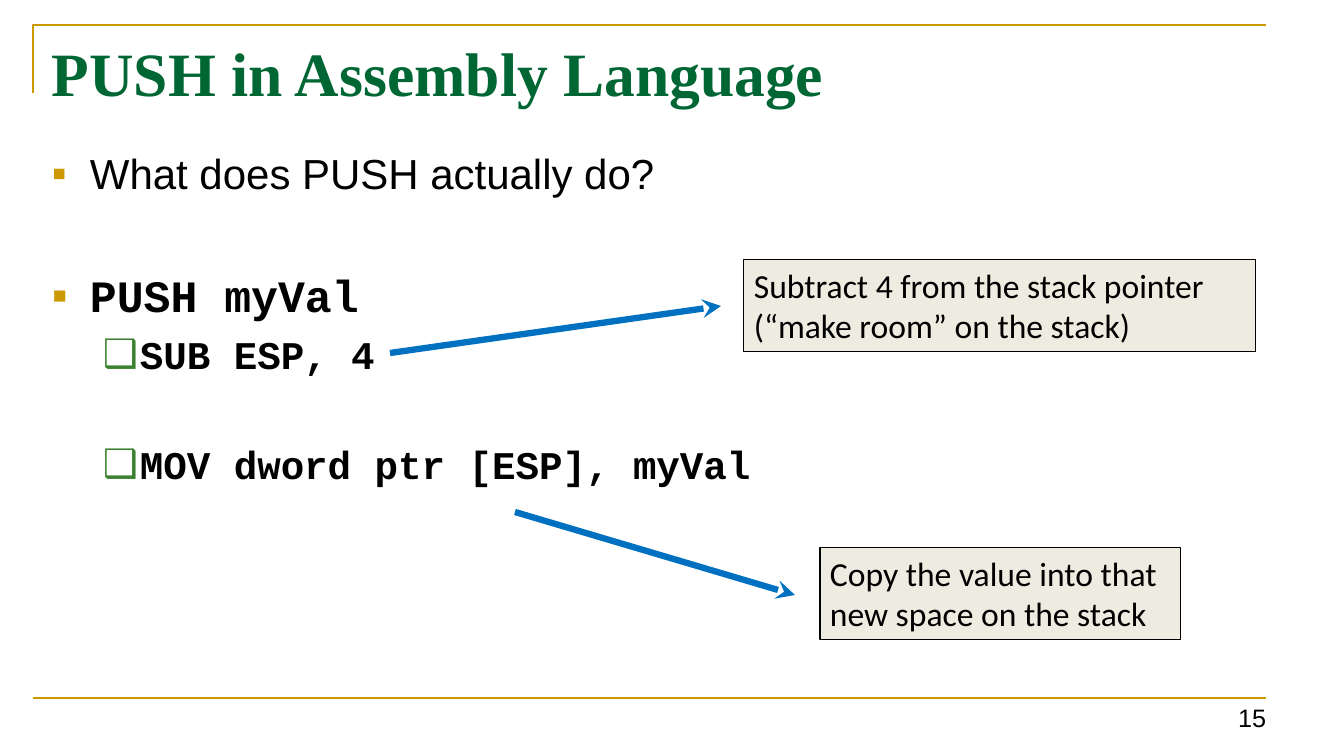
from lxml.etree import SubElement
from pptx import Presentation
from pptx.dml.color import RGBColor
from pptx.enum.shapes import MSO_CONNECTOR as Connector, MSO_SHAPE as Shape
from pptx.enum.text import MSO_ANCHOR as Anchor, MSO_AUTO_SIZE as AutoSize, PP_ALIGN as Align
from pptx.oxml.ns import qn
from pptx.util import Emu, Inches, Pt

THEME = {
    "gold": "CC9900", "title": "006633", "text": "000000", "sub_bullet": "3B812F",
    "note_fill": "EEECE1", "arrow": "0070C0",
    "sans": "Arial", "serif": "Times New Roman", "code": "Courier New", "note": "Calibri",
    "title_size": 44, "question_size": 30, "push_size": 32, "step_size": 28,
    "note_size": 24, "number_size": 18,
    "rule": 1.5, "note_border": 0.75, "arrow_width": 4.5,
}

SLIDE_SIZE = (1344, 756)
CORNER = [(33, 93), (33, 25), (1266, 25)]
FOOTER_RULE = [(33, 698), (1266, 698)]
TITLE = ("PUSH in Assembly Language", (42, 30, 1234, 151))
NUMBER = ("15", (1131, 688, 145, 49))
BODY_BOX = (42, 143, 1234, 532)
BODY = [
    ("question", "What does PUSH actually do?", 0),
    ("push", "PUSH myVal", 49.5),
    ("step", "SUB ESP, 4", 6.5),
    ("step", "MOV dword ptr [ESP], myVal", 45),
]
LEVELS = {
    "question": dict(font="sans", size="question_size", bullet=("▪", "gold", 38, 38)),
    "push": dict(font="code", size="push_size", bold=True, bullet=("▪", "gold", 38, 38)),
    "step": dict(font="code", size="step_size", bold=True, bullet=("❑", "sub_bullet", 88, 37)),
}
NOTES = [
    ("Subtract 4 from the stack pointer (“make room” on the stack)",
     (744, 260, 512, 92), [(390, 353), (721, 306)]),
    ("Copy the value into that new space on the stack",
     (820, 548, 361, 92), [(515, 512), (795, 595)]),
]

SCALE = Inches(1) / 100.8


def px(value):
    return Emu(round(value * SCALE))


def color(name):
    return RGBColor.from_string(THEME[name])


def write(paragraph, text, *, font, size, tint="text", bold=False, align=Align.LEFT,
          before=0, bullet=None):
    paragraph.alignment = align
    if before:
        paragraph.space_before = Pt(before)
    if bullet:
        mark, mark_tint, margin, hang = bullet
        props = paragraph._p.get_or_add_pPr()
        props.set("marL", str(px(margin)))
        props.set("indent", str(-px(hang)))
        SubElement(SubElement(props, qn("a:buClr")), qn("a:srgbClr"), val=THEME[mark_tint])
        SubElement(props, qn("a:buFont"), typeface=THEME["sans"])
        SubElement(props, qn("a:buChar"), char=mark)
    run = paragraph.add_run()
    run.text = text
    run.font.name = THEME[font]
    run.font.size = Pt(THEME[size])
    run.font.bold = bold
    run.font.color.rgb = color(tint)


def add_frame(slide, box, anchor=Anchor.TOP):
    frame = slide.shapes.add_textbox(*map(px, box)).text_frame
    frame.word_wrap = True
    frame.vertical_anchor = anchor
    return frame


def add_line(slide, ends, tint, width, arrow=False):
    points = [px(value) for point in ends for value in point]
    line = slide.shapes.add_connector(Connector.STRAIGHT, *points)
    line.line.color.rgb = color(tint)
    line.line.width = Pt(THEME[width])
    if arrow:
        SubElement(line.line._get_or_add_ln(), qn("a:tailEnd"), type="stealth")
    SubElement(line._element.spPr, qn("a:effectLst"))


def add_corner(slide):
    builder = slide.shapes.build_freeform(*CORNER[0], scale=SCALE)
    builder.add_line_segments(CORNER[1:], close=False)
    corner = builder.convert_to_shape()
    corner.shadow.inherit = False
    corner.fill.background()
    corner.line.color.rgb = color("gold")
    corner.line.width = Pt(THEME["rule"])


def add_note(slide, text, box):
    note = slide.shapes.add_shape(Shape.RECTANGLE, *map(px, box))
    note.shadow.inherit = False
    note.fill.solid()
    note.fill.fore_color.rgb = color("note_fill")
    note.line.color.rgb = color("text")
    note.line.width = Pt(THEME["note_border"])
    frame = note.text_frame
    frame.word_wrap = True
    frame.auto_size = AutoSize.SHAPE_TO_FIT_TEXT
    frame.vertical_anchor = Anchor.TOP
    write(frame.paragraphs[0], text, font="note", size="note_size")


def main():
    deck = Presentation()
    deck.slide_width, deck.slide_height = map(px, SLIDE_SIZE)
    slide = deck.slides.add_slide(deck.slide_layouts[6])

    add_corner(slide)
    add_line(slide, FOOTER_RULE, "gold", "rule")

    number, number_box = NUMBER
    write(add_frame(slide, number_box, Anchor.BOTTOM).paragraphs[0], number,
          font="sans", size="number_size", align=Align.RIGHT)
    title, title_box = TITLE
    write(add_frame(slide, title_box).paragraphs[0], title,
          font="serif", size="title_size", tint="title", bold=True)

    body = add_frame(slide, BODY_BOX)
    for index, (level, text, before) in enumerate(BODY):
        paragraph = body.add_paragraph() if index else body.paragraphs[0]
        write(paragraph, text, before=before, **LEVELS[level])

    for text, box, arrow in NOTES:
        add_note(slide, text, box)
        add_line(slide, arrow, "arrow", "arrow_width", arrow=True)

    deck.save("out.pptx")


if __name__ == "__main__":
    main()
